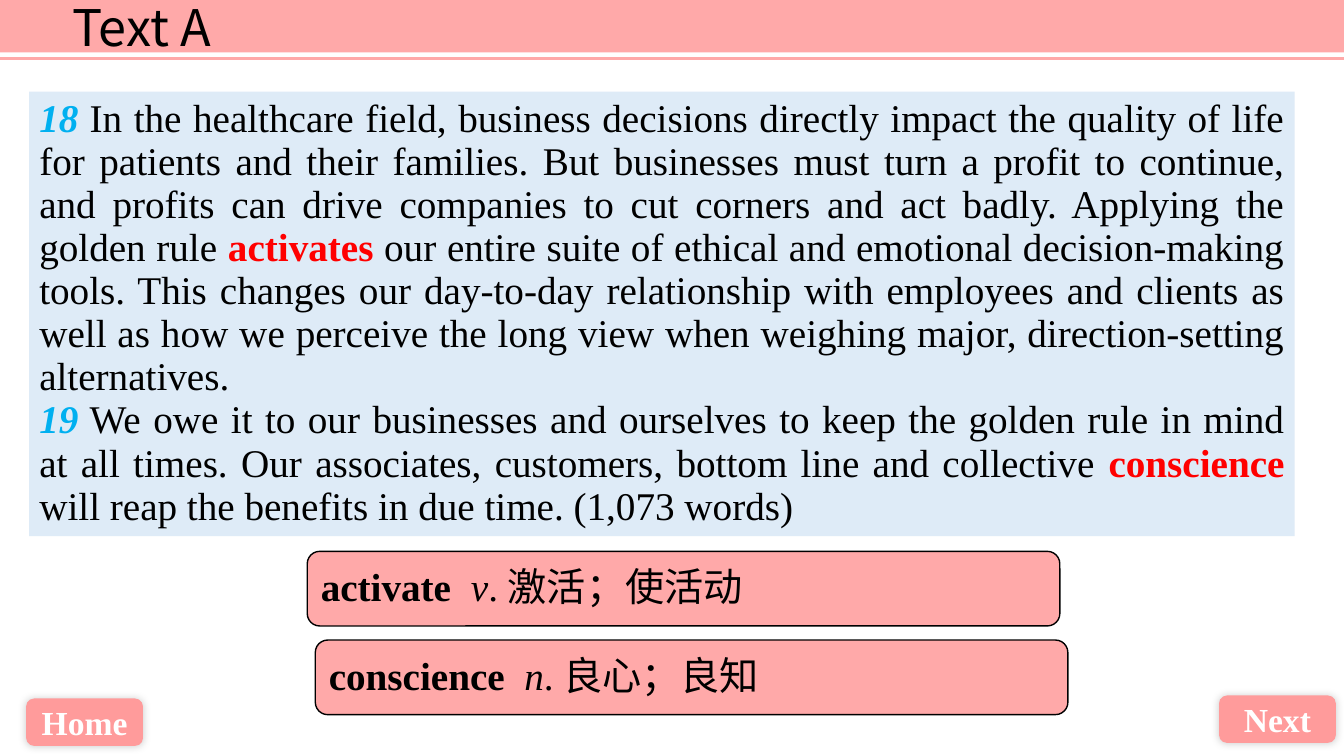
from dataclasses import dataclass

from lxml import etree
from pptx import Presentation
from pptx.dml.color import RGBColor
from pptx.enum.shapes import MSO_CONNECTOR, MSO_SHAPE
from pptx.enum.text import MSO_ANCHOR, MSO_AUTO_SIZE, PP_ALIGN
from pptx.oxml.ns import qn
from pptx.util import Pt

EMU_PER_PX = 9144  # 100 px to the inch
SLIDE_WIDTH, SLIDE_HEIGHT = 1334, 750
TITLE_AND_CONTENT = 1
RECTANGLE, ROUNDED = MSO_SHAPE.RECTANGLE, MSO_SHAPE.ROUNDED_RECTANGLE
STRAIGHT = MSO_CONNECTOR.STRAIGHT
TOP, MIDDLE = MSO_ANCHOR.TOP, MSO_ANCHOR.MIDDLE
LEFT, CENTER, JUSTIFY = PP_ALIGN.LEFT, PP_ALIGN.CENTER, PP_ALIGN.JUSTIFY
NO_AUTOFIT = MSO_AUTO_SIZE.NONE


@dataclass(frozen=True)
class Theme:
    pink: str = "FFA9A9"
    button: str = "FF9B9B"
    passage: str = "DEEBF7"
    number: str = "00B0F0"
    keyword: str = "FF0000"
    ink: str = "000000"
    white: str = "FFFFFF"
    serif: str = "Times New Roman"
    sans: str = "Noto Sans CJK SC"
    title_size: int = 36
    body_size: int = 28
    button_size: int = 24
    body_leading: float = 30.8


PASSAGE = [
    ("18", [
        ("In the healthcare field, business decisions directly impact the quality of "
         "life for patients and their families. But businesses must turn a profit to "
         "continue, and profits can drive companies to cut corners and act badly. "
         "Applying the golden rule ", False),
        ("activates", True),
        (" our entire suite of ethical and emotional decision-making tools. This "
         "changes our day-to-day relationship with employees and clients as well as "
         "how we perceive the long view when weighing major, direction-setting "
         "alternatives.", False),
    ]),
    ("19", [
        ("We owe it to our businesses and ourselves to keep the golden rule in mind "
         "at all times. Our associates, customers, bottom line and collective ", False),
        ("conscience", True),
        (" will reap the benefits in due time. (1,073 words)", False),
    ]),
]
PASSAGE_TAB = 69

# left, top, word, part of speech, meaning, tab stop
GLOSSARY = [
    (305, 547, "activate", "v", ". 激活；使活动", 149),
    (313, 635, "conscience", "n", ". 良心；良知", 194),
]
BUTTONS = [(26, 693, "Home"), (1210, 690, "Next")]


def px(length):
    return length * EMU_PER_PX


def set_east_asian_font(font_properties, name):
    etree.SubElement(font_properties, qn("a:ea"), typeface=name)


def add_tab_stop(paragraph, position):
    tabs = etree.SubElement(paragraph._p.get_or_add_pPr(), qn("a:tabLst"))
    etree.SubElement(tabs, qn("a:tab"), pos=str(px(position)), algn="l")


class SlideBuilder:
    def __init__(self, slide, theme):
        self.slide = slide
        self.theme = theme

    def place(self, shape, left, top, width, height):
        shape.left, shape.top = px(left), px(top)
        shape.width, shape.height = px(width), px(height)

    def paint(self, shape, color):
        shape.fill.solid()
        shape.fill.fore_color.rgb = RGBColor.from_string(color)

    def style(self, font, size, color, name, bold=False):
        font.size, font.name, font.bold = Pt(size), name, bold
        font.color.rgb = RGBColor.from_string(color)

    def run(self, paragraph, text, color, bold=False, italic=False):
        run = paragraph.add_run()
        run.text = text
        run.font.bold, run.font.italic = bold, italic
        run.font.color.rgb = RGBColor.from_string(color)
        return run

    def shape(self, kind, left, top, width, height, fill, line=None):
        shape = self.slide.shapes.add_shape(
            kind, px(left), px(top), px(width), px(height))
        shape.shadow.inherit = False
        self.paint(shape, fill)
        if line:
            shape.line.color.rgb = RGBColor.from_string(line)
            shape.line.width = Pt(1)
        else:
            shape.line.fill.background()
        return shape

    def header(self, text):
        theme = self.theme
        self.shape(RECTANGLE, 0, 0, SLIDE_WIDTH, 52, theme.pink)
        rule = self.slide.shapes.add_connector(
            STRAIGHT, 0, px(58), px(SLIDE_WIDTH), px(58))
        rule.line.color.rgb = RGBColor.from_string(theme.pink)
        rule.line.width = Pt(2)
        etree.SubElement(rule.element.spPr, qn("a:effectLst"))

        title = self.slide.shapes.title
        title.element.getparent().append(title.element)  # in front of the band
        self.place(title, 62, -9, 227, 71)
        frame = title.text_frame
        frame.text = text
        frame.auto_size, frame.vertical_anchor = NO_AUTOFIT, TOP
        paragraph = frame.paragraphs[0]
        paragraph.alignment = LEFT
        self.style(paragraph.font, theme.title_size, theme.ink, theme.sans)

    def passage(self, sections):
        theme = self.theme
        body = self.slide.placeholders[1]
        self.place(body, 29, 91, 1256, 441)
        self.paint(body, theme.passage)
        frame = body.text_frame
        frame.auto_size, frame.vertical_anchor = NO_AUTOFIT, TOP
        for index, (number, parts) in enumerate(sections):
            paragraph = frame.add_paragraph() if index else frame.paragraphs[0]
            paragraph.alignment = JUSTIFY
            paragraph.line_spacing = Pt(theme.body_leading)
            paragraph.space_before = Pt(0)
            properties = paragraph._p.get_or_add_pPr()
            properties.set("marL", "0")
            properties.set("indent", "0")
            etree.SubElement(properties, qn("a:buNone"))
            add_tab_stop(paragraph, PASSAGE_TAB)
            self.style(paragraph.font, theme.body_size, theme.ink, theme.serif)
            self.run(paragraph, number + "\t", theme.number, bold=True, italic=True)
            for text, is_keyword in parts:
                color = theme.keyword if is_keyword else theme.ink
                self.run(paragraph, text, color, bold=is_keyword)

    def glossary_entry(self, left, top, word, part_of_speech, meaning, tab):
        theme = self.theme
        card = self.shape(ROUNDED, left, top, 747, 74, theme.pink, theme.ink)
        card.text_frame.vertical_anchor = MIDDLE
        paragraph = card.text_frame.paragraphs[0]
        paragraph.alignment = LEFT
        paragraph.line_spacing = 0.9
        add_tab_stop(paragraph, tab)
        self.style(paragraph.font, theme.body_size, theme.ink, theme.serif)
        self.run(paragraph, word + "\t", theme.ink, bold=True)
        self.run(paragraph, part_of_speech, theme.ink, italic=True)
        definition = self.run(paragraph, meaning, theme.ink)
        set_east_asian_font(definition._r.get_or_add_rPr(), theme.sans)

    def button(self, left, top, label):
        theme = self.theme
        button = self.shape(ROUNDED, left, top, 116, 47, theme.button)
        effects = button.element.spPr.find(qn("a:effectLst"))
        shadow = etree.SubElement(effects, qn("a:outerShdw"), blurRad=str(Pt(6)),
                                  dist="0", dir=str(315 * 60000))
        color = etree.SubElement(shadow, qn("a:srgbClr"), val=theme.ink)
        etree.SubElement(color, qn("a:alpha"), val="20000")
        frame = button.text_frame
        frame.text = label
        frame.vertical_anchor = MIDDLE
        paragraph = frame.paragraphs[0]
        paragraph.alignment = CENTER
        self.style(paragraph.font, theme.button_size, theme.white, theme.serif, bold=True)


def main():
    presentation = Presentation()
    presentation.slide_width = px(SLIDE_WIDTH)
    presentation.slide_height = px(SLIDE_HEIGHT)
    layout = presentation.slide_layouts[TITLE_AND_CONTENT]
    builder = SlideBuilder(presentation.slides.add_slide(layout), Theme())
    builder.header("Text A")
    builder.passage(PASSAGE)
    for entry in GLOSSARY:
        builder.glossary_entry(*entry)
    for button in BUTTONS:
        builder.button(*button)
    presentation.save("out.pptx")


if __name__ == "__main__":
    main()
